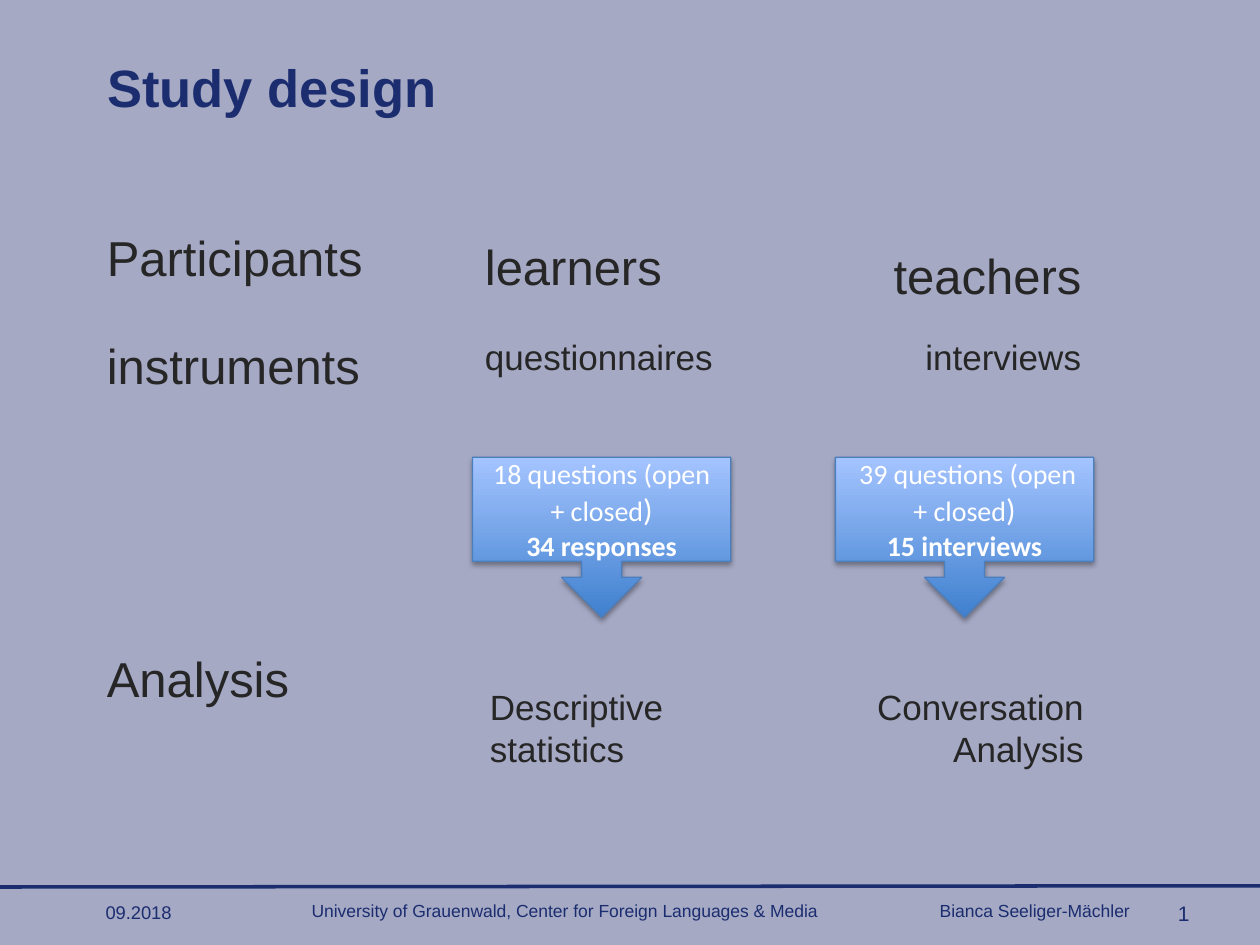
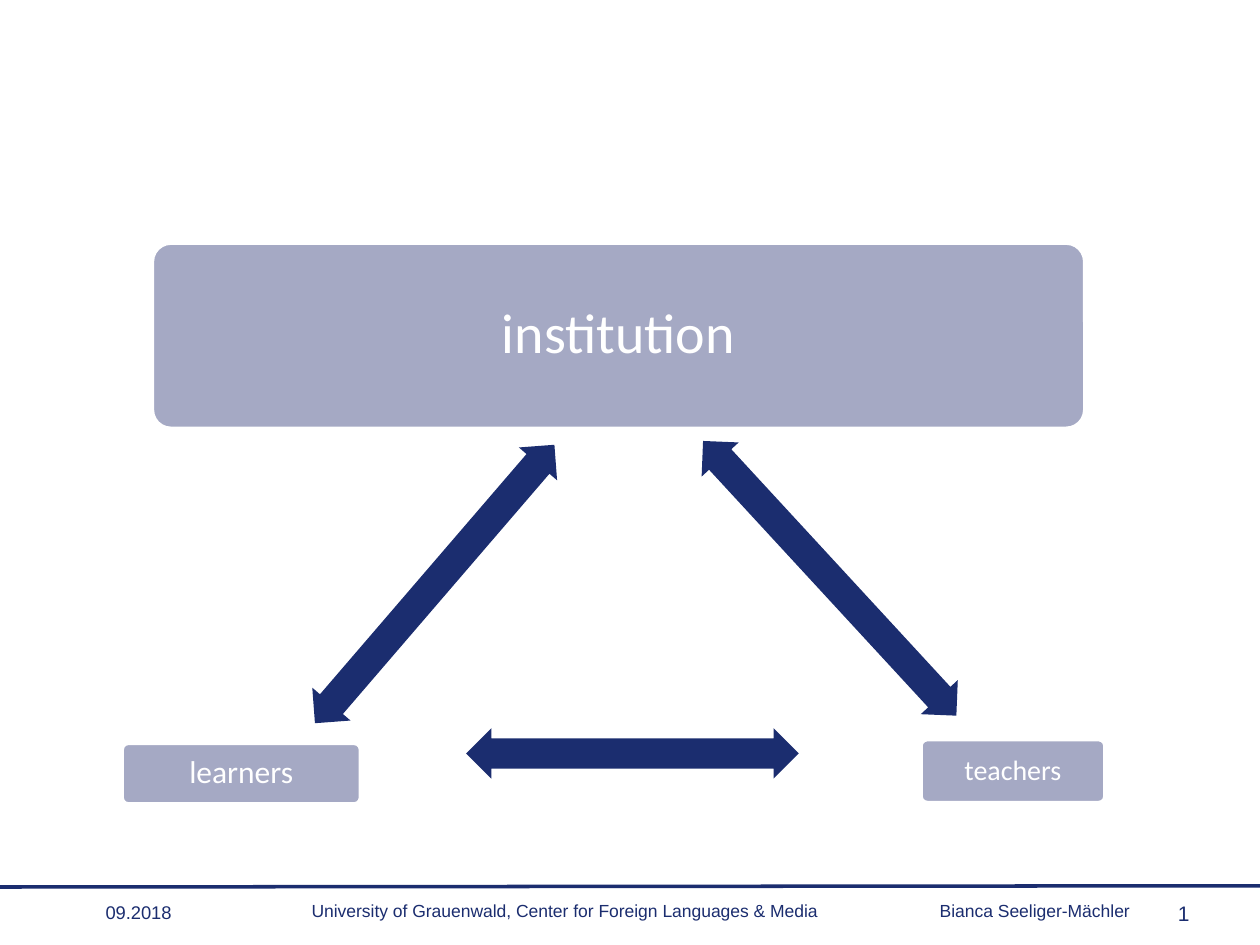
import math
from collections import namedtuple

from lxml import etree
from pptx import Presentation
from pptx import util as u
from pptx.dml.color import RGBColor
from pptx.enum import shapes, text
from pptx.oxml.ns import qn

Box = namedtuple("Box", "left top width height")
COLUMNS, ROWS = 100, 75
CELL = u.Inches(0.1)
NAVY, LAVENDER, CHARCOAL, WHITE = "1B2D6F", "A5A9C4", "262626", "FFFFFF"
SKY, AZURE, STEEL = "A4C4FF", "3F80CE", "4B7EBC"
LEFT, CENTER, RIGHT = text.PP_ALIGN.LEFT, text.PP_ALIGN.CENTER, text.PP_ALIGN.RIGHT
TOP, MIDDLE = text.MSO_ANCHOR.TOP, text.MSO_ANCHOR.MIDDLE


def rgb(code):
    """Turn a hex string into a colour."""
    return RGBColor.from_string(code)


def within(box, left, top, width, height):
    """Return a box whose corner is counted in cells from the corner of another."""
    return Box(box.left + left, box.top + top, width, height)


def emu(cells):
    """Turn grid cells into lengths."""
    return [u.Emu(round(cell * CELL)) for cell in cells]


def write(shape, lines, font="Arial", size=10, color=NAVY, align=LEFT,
          anchor=TOP, wrap=True, inset=None, spacing=None):
    """Fill a shape with lines, each a list of (words, size, bold) runs or a plain string."""
    frame = shape.text_frame
    frame.word_wrap, frame.vertical_anchor = wrap, anchor
    frame.auto_size = text.MSO_AUTO_SIZE.NONE
    if inset is not None:
        frame.margin_left = frame.margin_right = u.Inches(inset)
        frame.margin_top = frame.margin_bottom = u.Inches(inset)
    for index, line in enumerate(lines):
        paragraph = frame.add_paragraph() if index else frame.paragraphs[0]
        paragraph.alignment = align
        if spacing:
            paragraph.line_spacing = spacing
        for words, points, bold in [(line, size, False)] if isinstance(line, str) else line:
            run = paragraph.add_run()
            run.text = words
            run.font.name, run.font.size, run.font.bold = font, u.Pt(points), bold
            run.font.color.rgb = rgb(color)


def label(slide, box, words, **style):
    """Add a text box with one line of words."""
    write(slide.shapes.add_textbox(*emu(box)), [words], **style)


def preset(slide, kind, box):
    """Add a preset shape without a shadow."""
    shape = slide.shapes.add_shape(kind, *emu(box))
    shape.shadow.inherit = False
    return shape


def paint(shape, fill, line=None, width=2):
    """Give a shape a plain fill and a line or none."""
    shape.fill.solid()
    shape.fill.fore_color.rgb = rgb(fill)
    if line:
        shape.line.color.rgb = rgb(line)
        shape.line.width = u.Pt(width)
    else:
        shape.line.fill.background()


def add_footer(slide, box):
    """Draw the rule with date, institute, author and page number below it."""
    left, top, right, bottom = emu((box.left, box.top + 0.1, box.left + box.width, box.top))
    rule = slide.shapes.add_connector(shapes.MSO_CONNECTOR.STRAIGHT, left, top, right, bottom)
    rule.line.color.rgb = rgb(NAVY)
    rule.line.width = u.Pt(2)
    etree.SubElement(rule._element.spPr, qn("a:effectLst"))
    label(slide, within(box, 7.4, 0.7, 7.6, 2.9), "09.2018", size=10.5, wrap=False)
    label(slide, within(box, 19.5, 0.6, 50.6, 2.7),
          "University of Grauenwald, Center for Foreign Languages & Media", align=CENTER)
    label(slide, within(box, 73.6, 0.6, 17.8, 3), "Bianca Seeliger-Mächler")
    label(slide, within(box, 92.5, 0.7, 5.8, 3), "1", size=12)


def add_title(slide, box, words):
    """Move and format the title placeholder."""
    title = slide.shapes.title
    title.left, title.top, title.width, title.height = emu(box)
    write(title, [[(words, 30, True)]], wrap=False)


def add_callout(slide, box, lines):
    """Draw a shaded callout that points down to the analysis."""
    callout = preset(slide, shapes.MSO_SHAPE.DOWN_ARROW_CALLOUT, box)
    callout.fill.gradient()
    callout.fill.gradient_angle = 90
    for stop, color in zip(callout.fill.gradient_stops, (AZURE, SKY)):
        stop.color.rgb = rgb(color)
    callout.line.color.rgb = rgb(STEEL)
    callout.line.width = u.Pt(0.75)
    effects = callout._element.spPr.find(qn("a:effectLst"))
    shadow = etree.SubElement(effects, qn("a:outerShdw"), blurRad=str(u.Pt(3.1)),
                              dist=str(u.Pt(1.8)), dir="5400000", rotWithShape="0")
    black = etree.SubElement(shadow, qn("a:srgbClr"), val="000000")
    etree.SubElement(black, qn("a:alpha"), val="35000")
    write(callout, lines, font="Calibri", color=WHITE, align=CENTER, anchor=MIDDLE)


def add_group(slide, box, align, group, drop, instrument, questions, count, analysis, analysis_box):
    """Draw one participant group from its heading down to its analysis."""
    style = dict(color=CHARCOAL, align=align)
    add_callout(slide, within(box, 0, 18.7, box.width, 12.7),
                [[(questions, 16, False), (")", 18, False)], [(count, 16, True)]])
    label(slide, within(box, 0, drop, box.width, 5.7), group, size=28, **style)
    label(slide, within(box, 0, 8.5, box.width, 4.4), instrument, size=20, **style)
    label(slide, within(box, *analysis_box), analysis, size=20, **style)


def add_design(slide, box):
    """Lay out the row headings and the two participant groups."""
    for heading, top in (("Participants", 0), ("instruments", 8.5), ("Analysis", 33.4)):
        label(slide, within(box, 0, top, 23, 5.7), heading, size=28, color=CHARCOAL)
    add_group(slide, within(box, 30, 0, 20.5, box.height), LEFT, "learners", 0.7,
              "questionnaires", "18 questions (open + closed", "34 responses",
              "Descriptive statistics", (0.4, 36.3, 18.5, 7.7))
    add_group(slide, within(box, 58.8, 0, 20.5, box.height), RIGHT, "teachers", 1.4,
              "interviews", " 39 questions (open + closed", "15 interviews",
              "Conversation Analysis", (-5, 36.3, 25.7, 7.7))


def add_party(slide, box, words, size, inset):
    """Draw one rounded party of the triangle."""
    party = preset(slide, shapes.MSO_SHAPE.ROUNDED_RECTANGLE, box)
    party.adjustments[0] = 0.1
    paint(party, LAVENDER, WHITE)
    write(party, [words], font="Calibri", size=size, color=WHITE, align=CENTER,
          anchor=MIDDLE, inset=inset, spacing=0.9)


def add_exchange(slide, box, start, end, thickness=4):
    """Draw a double arrow between two points of a box."""
    across, down = end[0] - start[0], end[1] - start[1]
    length = math.hypot(across, down)
    left = (start[0] + end[0] - length) / 2
    top = (start[1] + end[1] - thickness) / 2
    arrow = preset(slide, shapes.MSO_SHAPE.LEFT_RIGHT_ARROW,
                   within(box, left, top, length, thickness))
    arrow.adjustments[0], arrow.adjustments[1] = 0.6, 0.5
    arrow.rotation = math.degrees(math.atan2(down, across))
    paint(arrow, NAVY)


def add_triangle(slide, box):
    """Draw the three parties and the exchanges between them."""
    add_party(slide, within(box, 2.4, 0, 74, 14.7), "institution", 32, 0.13)
    add_party(slide, within(box, 0, 39.7, 18.9, 4.8), "learners", 18, 0.07)
    add_party(slide, within(box, 63.4, 39.4, 14.6, 5), "teachers", 16, 0.07)
    for start, end in (((46.1, 15.7), (66.2, 37.5)),
                       ((34.3, 16), (15.3, 38.1)),
                       ((27.3, 40.5), (53.7, 40.5))):
        add_exchange(slide, box, start, end)


def add_slide(deck, layout, background):
    """Add a slide with its background and the shared footer."""
    slide = deck.slides.add_slide(deck.slide_layouts[layout])
    slide.background.fill.solid()
    slide.background.fill.fore_color.rgb = rgb(background)
    add_footer(slide, Box(0, 70.3, COLUMNS, 4.7))
    return slide


def main():
    """Build and save the deck."""
    deck = Presentation()
    deck.slide_width, deck.slide_height = emu((COLUMNS, ROWS))
    title_only, blank = 5, 6
    design = add_slide(deck, title_only, LAVENDER)
    add_title(design, Box(7.5, 3.9, 28.5, 6.1), "Study design")
    add_design(design, Box(7.5, 17.6, 79.5, 44))
    add_triangle(add_slide(deck, blank, WHITE), Box(9.7, 19.3, 78, 44.5))
    deck.save("out.pptx")


if __name__ == "__main__":
    main()
